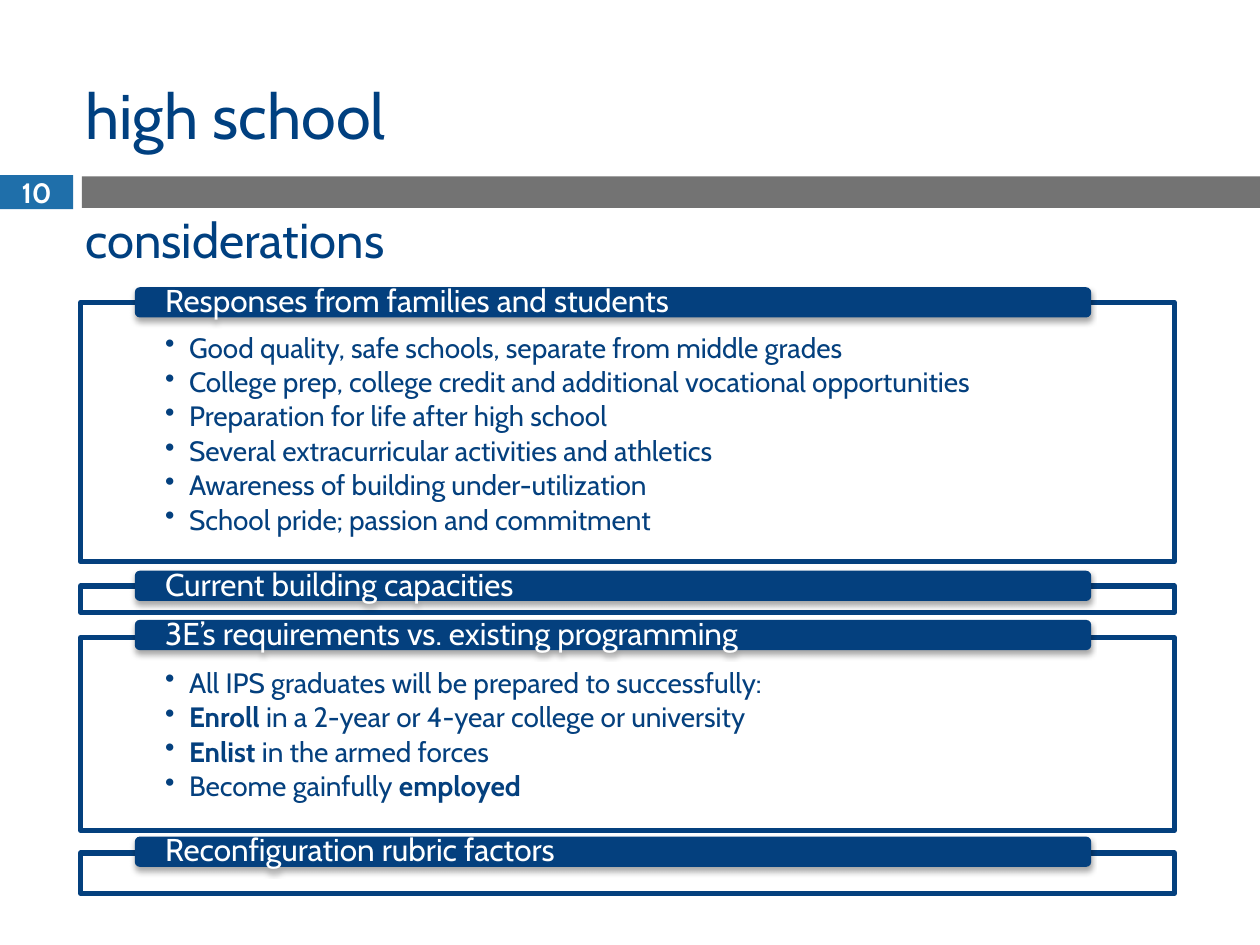
"""Build the high school considerations slide."""
from dataclasses import dataclass

from lxml import etree
from pptx import Presentation
from pptx.dml.color import RGBColor
from pptx.enum.shapes import MSO_SHAPE
from pptx.enum.text import MSO_ANCHOR, PP_ALIGN
from pptx.oxml.ns import qn
from pptx.shapes.autoshape import Shape
from pptx.slide import Slide
from pptx.util import Pt

PX = 9144
RECTANGLE, ROUNDED = MSO_SHAPE.RECTANGLE, MSO_SHAPE.ROUNDED_RECTANGLE
TOP, MIDDLE = MSO_ANCHOR.TOP, MSO_ANCHOR.MIDDLE
LEFT, CENTER = PP_ALIGN.LEFT, PP_ALIGN.CENTER
FONT = "Cabin"
COLORS = {
    "navy": "04407E", "title": "004080", "blue": "1F6FAA",
    "gray": "737373", "white": "FFFFFF", "black": "000000",
}
PANEL_LEFT, PANEL_WIDTH = 64, 868
BAR_LEFT, BAR_WIDTH, BAR_HEIGHT = 107, 759, 24
HANGING_INDENT = 19


@dataclass(frozen=True)
class Run:
    text: str
    bold: bool = False


@dataclass(frozen=True)
class Style:
    size: int
    color: str
    align: PP_ALIGN = LEFT
    anchor: MSO_ANCHOR = MIDDLE
    margins: tuple[int, int, int, int] = (10, 5, 10, 5)
    line_spacing: float = 1.0
    space_after: float = 0
    bullet: str = ""


@dataclass(frozen=True)
class Panel:
    heading: str
    top: int
    height: int
    bar_top: int
    items: tuple[tuple[Run, ...], ...] = ()


HEADING = Style(18, "white", margins=(23, 0, 23, 0), line_spacing=0.9)
BODY = Style(16, "navy", anchor=TOP, margins=(67, 25, 67, 6),
             line_spacing=0.9, space_after=2.4, bullet="•")
PANELS = (
    Panel("Responses from families and students", 240, 206, 228, (
        (Run("Good quality, safe schools, separate from middle grades"),),
        (Run("College prep, college credit and additional vocational opportunities"),),
        (Run("Preparation for life after high school"),),
        (Run("Several extracurricular activities and athletics"),),
        (Run("Awareness of building under-utilization"),),
        (Run("School pride; passion and commitment"),),
    )),
    Panel("Current building capacities", 465, 21, 453),
    Panel("3E’s requirements vs. existing programming", 506, 153, 492, (
        (Run("All IPS graduates will be prepared to successfully:"),),
        (Run("Enroll", True), Run(" in a 2-year or 4-year college or university")),
        (Run("Enlist", True), Run(" in the armed forces")),
        (Run("Become gainfully "), Run("employed", True)),
    )),
    Panel("Reconfiguration rubric factors", 677, 32, 664),
)


def rgb(name: str) -> RGBColor:
    return RGBColor.from_string(COLORS[name])


def set_values(target: object, values: dict[str, object]) -> None:
    for name, value in values.items():
        setattr(target, name, value)


def write(shape: Shape, lines: tuple[tuple[Run, ...], ...], style: Style) -> None:
    frame = shape.text_frame
    left, top, right, bottom = (margin * PX for margin in style.margins)
    set_values(frame, {
        "word_wrap": True, "vertical_anchor": style.anchor,
        "margin_left": left, "margin_top": top,
        "margin_right": right, "margin_bottom": bottom,
    })
    for index, line in enumerate(lines):
        paragraph = frame.add_paragraph() if index else frame.paragraphs[0]
        set_values(paragraph, {
            "alignment": style.align, "line_spacing": style.line_spacing,
            "space_after": Pt(style.space_after),
        })
        if style.bullet:
            properties = paragraph._p.get_or_add_pPr()
            properties.set("marL", str(HANGING_INDENT * PX))
            properties.set("indent", str(-HANGING_INDENT * PX))
            etree.SubElement(properties, qn("a:buChar"), char=style.bullet)
        for part in line:
            run = paragraph.add_run()
            run.text = part.text
            set_values(run.font, {"name": FONT, "size": Pt(style.size), "bold": part.bold})
            run.font.color.rgb = rgb(style.color)


def add_box(slide: Slide, kind: MSO_SHAPE, box: tuple[int, int, int, int],
            fill: str, line: str = "") -> Shape:
    shape = slide.shapes.add_shape(kind, *(length * PX for length in box))
    shape.shadow.inherit = False
    shape.fill.solid()
    shape.fill.fore_color.rgb = rgb(fill)
    if line:
        shape.line.color.rgb = rgb(line)
        shape.line.width = Pt(3)
    else:
        shape.line.fill.background()
    return shape


def add_shadow(shape: Shape) -> None:
    effects = shape._element.spPr.find(qn("a:effectLst"))
    shadow = etree.SubElement(
        effects, qn("a:outerShdw"), blurRad=str(Pt(3)), dist=str(Pt(2)),
        dir="5400000", rotWithShape="0")
    color = etree.SubElement(shadow, qn("a:srgbClr"), val=COLORS["black"])
    etree.SubElement(color, qn("a:alpha"), val="35000")


def add_label(slide: Slide, box: tuple[int, int, int, int], text: str, size: int) -> None:
    label = slide.shapes.add_textbox(*(length * PX for length in box))
    write(label, ((Run(text),),), Style(size, "title"))


def add_panel(slide: Slide, panel: Panel) -> None:
    frame = add_box(slide, RECTANGLE, (PANEL_LEFT, panel.top, PANEL_WIDTH, panel.height),
                    "white", "navy")
    if panel.items:
        write(frame, panel.items, BODY)
    bar = add_box(slide, ROUNDED, (BAR_LEFT, panel.bar_top, BAR_WIDTH, BAR_HEIGHT), "navy")
    add_shadow(bar)
    write(bar, ((Run(panel.heading),),), HEADING)


def main() -> None:
    presentation = Presentation()
    set_values(presentation, {"slide_width": 1000 * PX, "slide_height": 750 * PX})
    slide = presentation.slides.add_slide(presentation.slide_layouts[6])
    add_box(slide, RECTANGLE, (65, 140, 935, 25), "gray")
    number = add_box(slide, RECTANGLE, (0, 139, 58, 27), "blue")
    write(number, ((Run("10", True),),), Style(16, "white", align=CENTER))
    for panel in PANELS:
        add_panel(slide, panel)
    add_label(slide, (58, 166, 551, 47), "considerations", 28)
    add_label(slide, (58, 62, 876, 58), "high school", 36)
    presentation.save("out.pptx")


if __name__ == "__main__":
    main()
